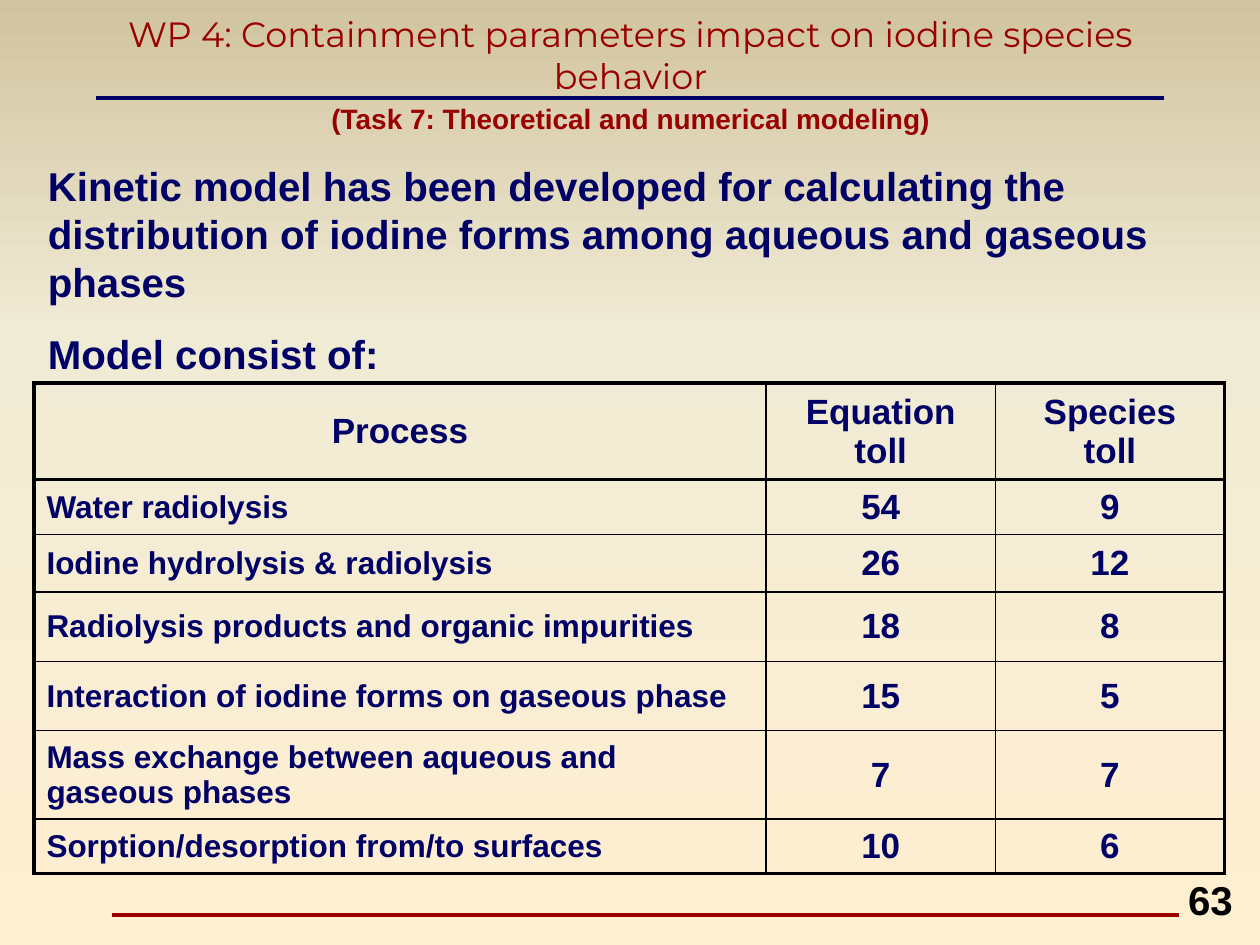
from lxml.etree import SubElement
from pptx import Presentation
from pptx.dml.color import RGBColor
from pptx.enum.shapes import MSO_CONNECTOR
from pptx.enum.text import MSO_ANCHOR, MSO_AUTO_SIZE, PP_ALIGN
from pptx.oxml.ns import qn
from pptx.util import Pt

NAVY, RED, BLACK = "000066", "990000", "000000"
THICK, THIN = 2.25, 1
HEADER = ("Process", "Equation\ntoll", "Species\ntoll")
PROCESSES = (
    ("Water radiolysis", 54, 9),
    ("Iodine hydrolysis & radiolysis", 26, 12),
    ("Radiolysis products and organic impurities", 18, 8),
    ("Interaction of iodine forms on gaseous phase", 15, 5),
    ("Mass exchange between aqueous and gaseous phases", 7, 7),
    ("Sorption/desorption from/to surfaces", 10, 6),
)
COLUMN_WIDTHS = (418.4, 131, 131)
ROW_HEIGHTS = (54.7, 31, 33, 39.6, 39.6, 50.2, 31.2)


def color(code):
    return RGBColor.from_string(code)


def write(frame, text, size=20, font="Arial", fill=NAVY, bold=True,
          align=PP_ALIGN.LEFT, gap=0, spacing=None):
    """Write one paragraph per line of text, with gap points between them."""
    for index, line in enumerate(text.split("\n")):
        para = frame.add_paragraph() if index else frame.paragraphs[0]
        para.alignment = align
        para.space_before = Pt(gap if index else 0)
        if spacing:
            para.line_spacing = Pt(spacing)
        span = para.add_run()
        span.text = line
        span.font.size, span.font.name, span.font.bold = Pt(size), font, bold
        span.font.color.rgb = color(fill)


def paint_background(page):
    fill = page.background.fill
    fill.gradient()
    fill.gradient_angle = 270
    stops = fill._fill._gradFill.find(qn("a:gsLst"))
    for stop in list(stops):
        stops.remove(stop)
    for position, code in ((0, "D1C39F"), (35, "F0EBD5"), (100, "FFEFD1")):
        stop = SubElement(stops, qn("a:gs"), pos=str(position * 1000))
        SubElement(stop, qn("a:srgbClr"), val=code)


def add_rule(page, left, top, width, code):
    rule = page.shapes.add_connector(
        MSO_CONNECTOR.STRAIGHT, Pt(left), Pt(top), Pt(left + width), Pt(top))
    rule.line.color.rgb = color(code)
    rule.line.width = Pt(THICK)
    SubElement(rule._element.spPr, qn("a:effectLst"))


def add_text(page, left, top, width, height, text, wrap=True, **style):
    box = page.shapes.add_textbox(Pt(left), Pt(top), Pt(width), Pt(height))
    box.text_frame.word_wrap = wrap
    write(box.text_frame, text, **style)


def place_title(page, left, top, width, height, text):
    title = page.shapes.title
    title.left, title.top, title.width, title.height = map(
        Pt, (left, top, width, height))
    frame = title.text_frame
    frame.auto_size = MSO_AUTO_SIZE.NONE
    frame.word_wrap = True
    frame.vertical_anchor = MSO_ANCHOR.MIDDLE
    frame.margin_bottom = Pt(21.6)
    write(frame, text, font="Montserrat", fill=RED, bold=False,
          align=PP_ALIGN.CENTER)


def set_borders(cell, **widths):
    properties = cell._tc.get_or_add_tcPr()
    for index, side in enumerate(("lnL", "lnR", "lnT", "lnB")):
        line = SubElement(properties, qn("a:" + side), w=str(Pt(widths[side])))
        fill = SubElement(line, qn("a:solidFill"))
        SubElement(fill, qn("a:srgbClr"), val=BLACK)


def add_process_table(page, left, top):
    rows = (HEADER,) + PROCESSES
    last_row, last_column = len(rows) - 1, len(HEADER) - 1
    table = page.shapes.add_table(
        len(rows), len(HEADER), Pt(left), Pt(top),
        Pt(sum(COLUMN_WIDTHS)), Pt(sum(ROW_HEIGHTS))).table
    table.first_row = table.horz_banding = False
    for column, width in zip(table.columns, COLUMN_WIDTHS):
        column.width = Pt(width)
    for r, (row, height) in enumerate(zip(rows, ROW_HEIGHTS)):
        table.rows[r].height = Pt(height)
        for c, value in enumerate(row):
            cell = table.cell(r, c)
            is_name = r > 0 and c == 0
            cell.vertical_anchor = MSO_ANCHOR.MIDDLE
            write(cell.text_frame, str(value), size=18 if is_name else 20,
                  align=PP_ALIGN.LEFT if is_name else PP_ALIGN.CENTER)
            set_borders(cell,
                        lnL=THICK if c == 0 else THIN,
                        lnR=THICK if c == last_column else THIN,
                        lnT=THICK if r < 2 else THIN,
                        lnB=THICK if r in (0, last_row) else THIN)
            cell.fill.background()


def build_slide(deck):
    page = deck.slides.add_slide(deck.slide_layouts[5])
    paint_background(page)
    add_rule(page, 54.7, 56.2, 610.6, NAVY)
    add_rule(page, 64.1, 522.7, 609.8, RED)
    add_text(page, 20.2, 88.6, 680.4, 103.7,
             "Kinetic model has been developed for calculating the distribution"
             " of iodine forms among aqueous and gaseous phases\n"
             "Model consist of:", size=23, gap=13.7, spacing=27.4)
    add_process_table(page, 19.4, 218.9)
    place_title(page, 20.2, 15.1, 680.4, 49.7,
                "WP 4: Containment parameters impact on iodine species behavior")
    add_text(page, 20.2, 54.7, 680.4, 26.6,
             "(Task 7: Theoretical and numerical modeling)",
             size=16, fill=RED, align=PP_ALIGN.CENTER)
    add_text(page, 671.8, 496.8, 40.3, 34.6, "63", wrap=False,
             size=23, fill=BLACK)


def main():
    deck = Presentation()
    deck.slide_width, deck.slide_height = Pt(720), Pt(540)
    build_slide(deck)
    deck.save("out.pptx")


if __name__ == "__main__":
    main()
